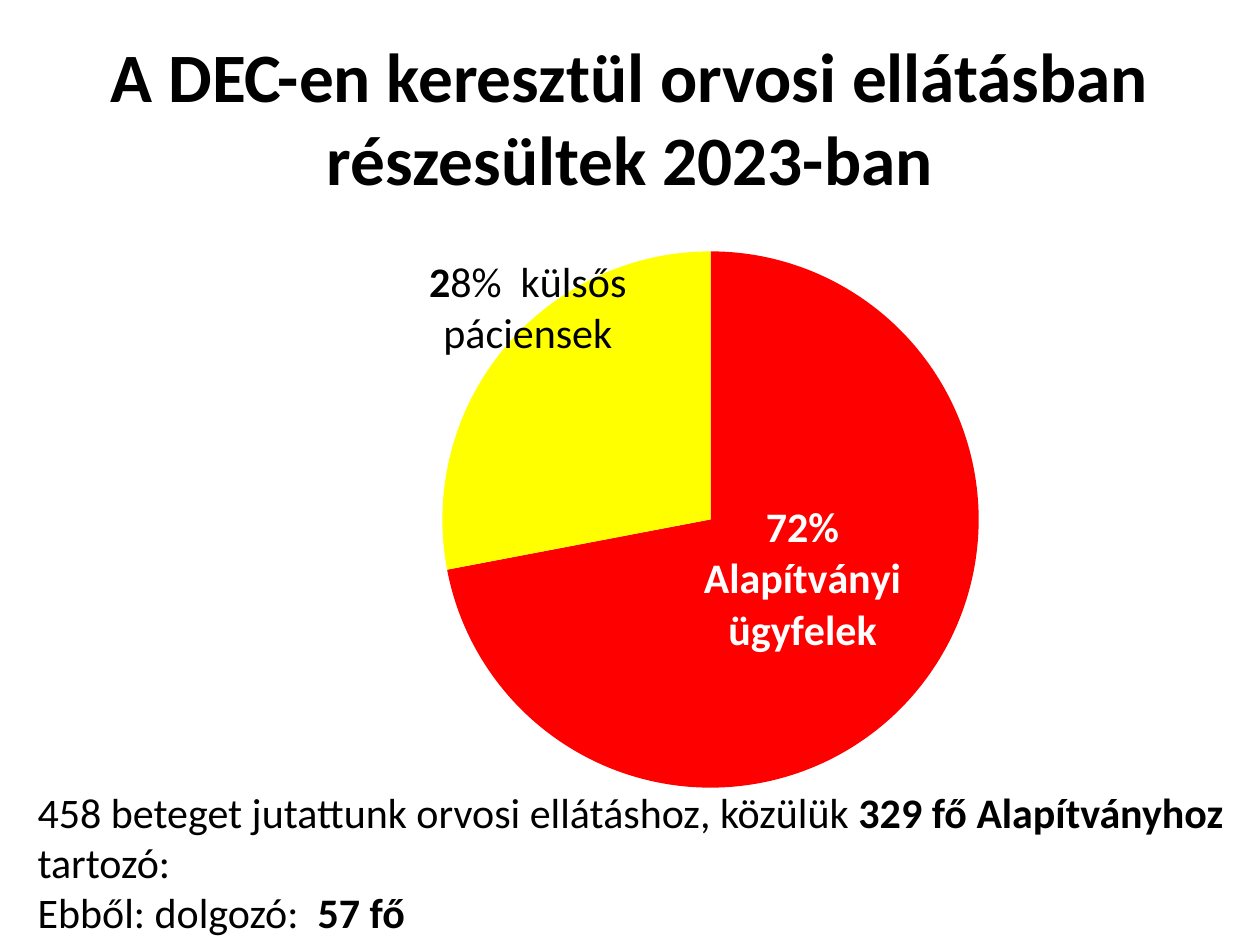
from dataclasses import dataclass

from lxml import etree
from pptx import Presentation
from pptx.chart.data import CategoryChartData
from pptx.dml.color import RGBColor
from pptx.enum.chart import XL_CHART_TYPE, XL_LABEL_POSITION
from pptx.enum.text import MSO_ANCHOR, PP_ALIGN
from pptx.oxml import parse_xml
from pptx.oxml.ns import nsdecls, qn
from pptx.util import Inches, Pt

PIE = XL_CHART_TYPE.PIE
MID = XL_LABEL_POSITION.CENTER
CENTER, LEFT = PP_ALIGN.CENTER, PP_ALIGN.LEFT
TOP, MIDDLE = MSO_ANCHOR.TOP, MSO_ANCHOR.MIDDLE


@dataclass(frozen=True)
class Theme:
    font: str = "Calibri"
    black: RGBColor = RGBColor(0, 0, 0)
    white: RGBColor = RGBColor(255, 255, 255)
    red: RGBColor = RGBColor(255, 0, 0)
    yellow: RGBColor = RGBColor(255, 255, 0)
    title: float = 39.6
    body: float = 24
    chart: float = 10


THEME = Theme()


def add_runs(para, runs, size, color):
    for text, bold in runs:
        run = para.add_run()
        run.text = text
        font = run.font
        font.name, font.size, font.bold = THEME.font, Pt(size), bold
        font.color.rgb = color


def add_text(slide, box, lines, size, align=LEFT, anchor=TOP):
    frame = slide.shapes.add_textbox(*map(Inches, box)).text_frame
    frame.word_wrap = True
    frame.vertical_anchor = anchor
    for i, runs in enumerate(lines):
        para = frame.paragraphs[0] if i == 0 else frame.add_paragraph()
        para.alignment = align
        add_runs(para, runs, size, THEME.black)


def make_layout(**values):
    layout = parse_xml(f"<c:layout {nsdecls('c')}><c:manualLayout/></c:layout>")
    for name, value in values.items():
        etree.SubElement(layout[0], qn(f"c:{name}")).set("val", str(value))
    return layout


def set_plot(chart, x, y, w, h):
    area = chart.plots[0]._element.getparent()
    for old in area.findall(qn("c:layout")):
        area.remove(old)
    area.insert(0, make_layout(layoutTarget="inner", xMode="edge",
                               yMode="edge", x=x, y=y, w=w, h=h))


def add_label(series, index, runs, color, shift):
    label = series.points[index].data_label
    add_runs(label.text_frame.paragraphs[0], runs, THEME.body, color)
    label.position = MID
    node = series._element.find(qn("c:dLbls")).findall(qn("c:dLbl"))[index]
    node.insert(1, make_layout(x=shift[0], y=shift[1]))


def add_pie(slide, box, slices):
    data = CategoryChartData()
    data.categories = [str(i + 1) for i in range(len(slices))]
    data.add_series("Series 1", [part[0] for part in slices])
    chart = slide.shapes.add_chart(PIE, *map(Inches, box), data).chart
    chart.has_legend = chart.has_title = False
    chart.font.name, chart.font.size = THEME.font, Pt(THEME.chart)
    chart.font.color.rgb = THEME.black
    chart.plots[0].vary_by_categories = True
    set_plot(chart, 0.14, 0.09, 0.86, 0.86)
    series = chart.plots[0].series[0]
    for i, (_, fill, runs, color, shift) in enumerate(slices):
        look = series.points[i].format
        look.fill.solid()
        look.fill.fore_color.rgb = fill
        look.line.fill.background()
        add_label(series, i, runs, color, shift)


def main():
    deck = Presentation()
    deck.slide_width, deck.slide_height = Inches(10), Inches(7.5)
    slide = deck.slides.add_slide(deck.slide_layouts[6])
    title = "A DEC-en keresztül orvosi ellátásban részesültek 2023-ban"
    add_text(slide, (0.5, 0.3, 9, 1.25), [[(title, True)]],
             THEME.title, CENTER, MIDDLE)
    add_pie(slide, (0.51, 1.55, 9, 4.95), [
        (72, THEME.red, [("72% Alapítványi ügyfelek", True)],
         THEME.white, (-0.01, -0.04)),
        (28, THEME.yellow, [("2", True), ("8%  külsős páciensek", False)],
         THEME.black, (-0.07, -0.2)),
    ])
    add_text(slide, (0.2, 6.19, 9.8, 1.31), [
        [("458 beteget jutattunk orvosi ellátáshoz, közülük ", False),
         ("329 fő Alapítványhoz ", True), ("tartozó:", False)],
        [("Ebből: dolgozó:  ", False), ("57 fő", True)],
    ], THEME.body)
    deck.save("out.pptx")


if __name__ == "__main__":
    main()
